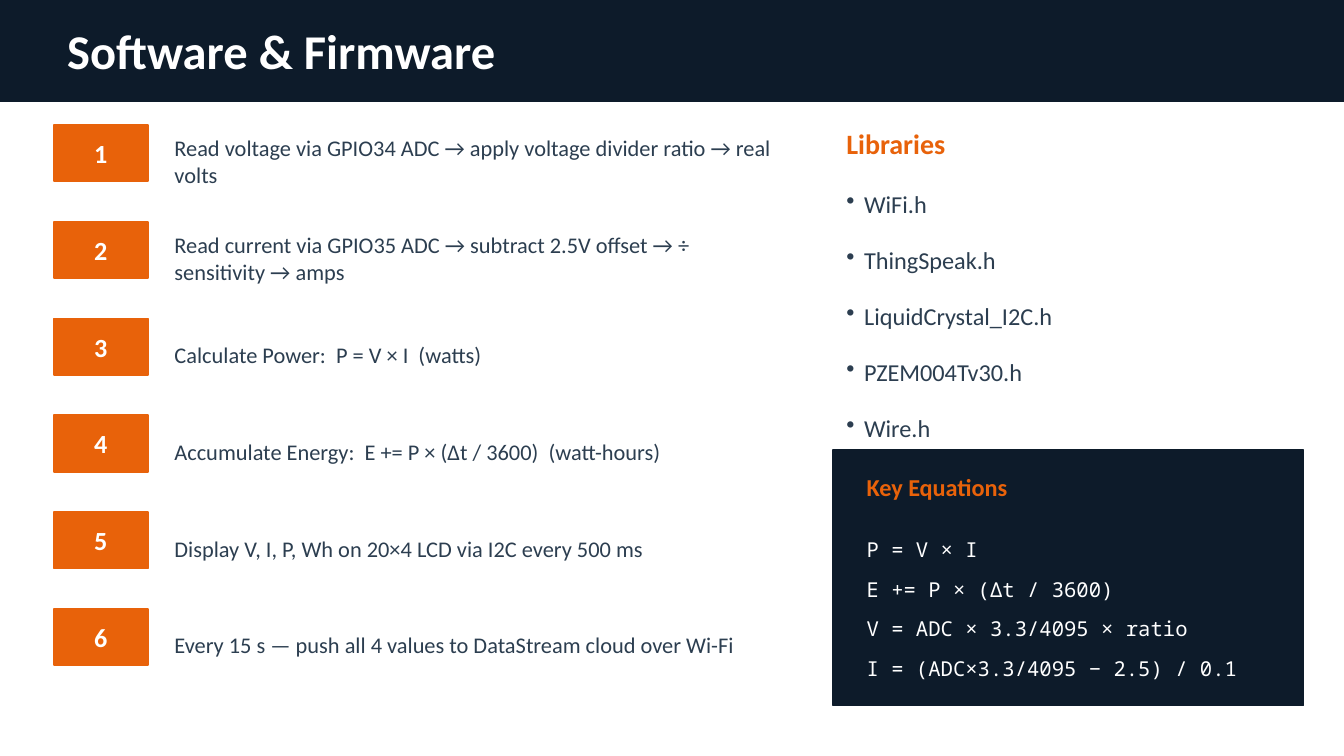
import pptx
import pptx.dml.color
import pptx.enum.shapes
import pptx.enum.text
import pptx.oxml.ns
import pptx.util
from lxml import etree

Pt = pptx.util.Pt
RGBColor = pptx.dml.color.RGBColor
PP_ALIGN = pptx.enum.text.PP_ALIGN

NAVY = RGBColor(0x0D, 0x1B, 0x2A)
ORANGE = RGBColor(0xE8, 0x62, 0x0A)
SLATE = RGBColor(0x2C, 0x3E, 0x50)
WHITE = RGBColor(0xFF, 0xFF, 0xFF)

STEPS = [
    "Read voltage via GPIO34 ADC → apply voltage divider ratio → real volts",
    "Read current via GPIO35 ADC → subtract 2.5V offset → ÷ sensitivity → amps",
    "Calculate Power:  P = V × I  (watts)",
    "Accumulate Energy:  E += P × (Δt / 3600)  (watt-hours)",
    "Display V, I, P, Wh on 20×4 LCD via I2C every 500 ms",
    "Every 15 s — push all 4 values to DataStream cloud over Wi-Fi",
]
LIBRARIES = ["WiFi.h", "ThingSpeak.h", "LiquidCrystal_I2C.h", "PZEM004Tv30.h", "Wire.h"]
EQUATIONS = [
    "P = V × I",
    "E += P × (Δt / 3600)",
    "V = ADC × 3.3/4095 × ratio",
    "I = (ADC×3.3/4095 − 2.5) / 0.1",
]

presentation = pptx.Presentation()
presentation.slide_width = Pt(720)
presentation.slide_height = Pt(405)
slide = presentation.slides.add_slide(presentation.slide_layouts[5])


def add_panel(left, top, width, height, color):
    """Add a rectangle whose outline has the colour of its fill."""
    panel = slide.shapes.add_shape(
        pptx.enum.shapes.MSO_SHAPE.RECTANGLE, Pt(left), Pt(top), Pt(width), Pt(height))
    panel.shadow.inherit = False
    panel.fill.solid()
    panel.fill.fore_color.rgb = color
    panel.line.color.rgb = color
    panel.line.width = Pt(1)
    return panel


def write(shape, lines, size, color, bold=False, font="Calibri",
          align=PP_ALIGN.LEFT, gap=0, bullet=False):
    """Fill a shape with vertically centred lines, gap points apart."""
    frame = shape.text_frame
    frame.word_wrap = True
    frame.auto_size = pptx.enum.text.MSO_AUTO_SIZE.NONE
    frame.vertical_anchor = pptx.enum.text.MSO_ANCHOR.MIDDLE
    frame.text = "\n".join(lines)
    for index, paragraph in enumerate(frame.paragraphs):
        paragraph.alignment = align
        if index:
            paragraph.space_before = Pt(gap)
        if bullet:
            properties = paragraph._p.get_or_add_pPr()
            properties.set("marL", str(Pt(9.5)))
            properties.set("indent", str(Pt(-9.5)))
            etree.SubElement(properties, pptx.oxml.ns.qn("a:buChar")).set("char", "•")
        for run in paragraph.runs:
            run.font.name = font
            run.font.size = Pt(size)
            run.font.bold = bold
            run.font.color.rgb = color


# Header: the bar goes behind the title
title = slide.shapes.title
header = add_panel(0, 0, 720, 54, NAVY)
title.element.addprevious(header.element)
title.left, title.top, title.width, title.height = Pt(28.8), Pt(7.2), Pt(662.4), Pt(39.6)
write(title, ["Software & Firmware"], 26, WHITE, bold=True)

# Numbered steps
for index, step in enumerate(STEPS):
    top = 66.96 + index * 51.84
    badge = add_panel(28.8, top, 50.4, 30.24, ORANGE)
    write(badge, [str(index + 1)], 14, WHITE, bold=True, align=PP_ALIGN.CENTER)
    description = slide.shapes.add_textbox(Pt(86.4), Pt(top + 1.44), Pt(338.4), Pt(36))
    write(description, [step], 12, SLATE)

# Libraries
libraries_heading = slide.shapes.add_textbox(Pt(446.4), Pt(63.36), Pt(252), Pt(27.36))
write(libraries_heading, ["Libraries"], 15, ORANGE, bold=True)
libraries = slide.shapes.add_textbox(Pt(446.4), Pt(95.04), Pt(252), Pt(148.32))
write(libraries, LIBRARIES, 13, SLATE, gap=14.4, bullet=True)

# Key equations
add_panel(446.4, 241.2, 252, 136.8, NAVY)
equations_heading = slide.shapes.add_textbox(Pt(457.2), Pt(248.4), Pt(230.4), Pt(25.2))
write(equations_heading, ["Key Equations"], 13, ORANGE, bold=True)
equations = slide.shapes.add_textbox(Pt(457.2), Pt(280.8), Pt(230.4), Pt(90.72))
write(equations, EQUATIONS, 11, WHITE, font="Noto Sans Mono", gap=8)

presentation.save("out.pptx")
